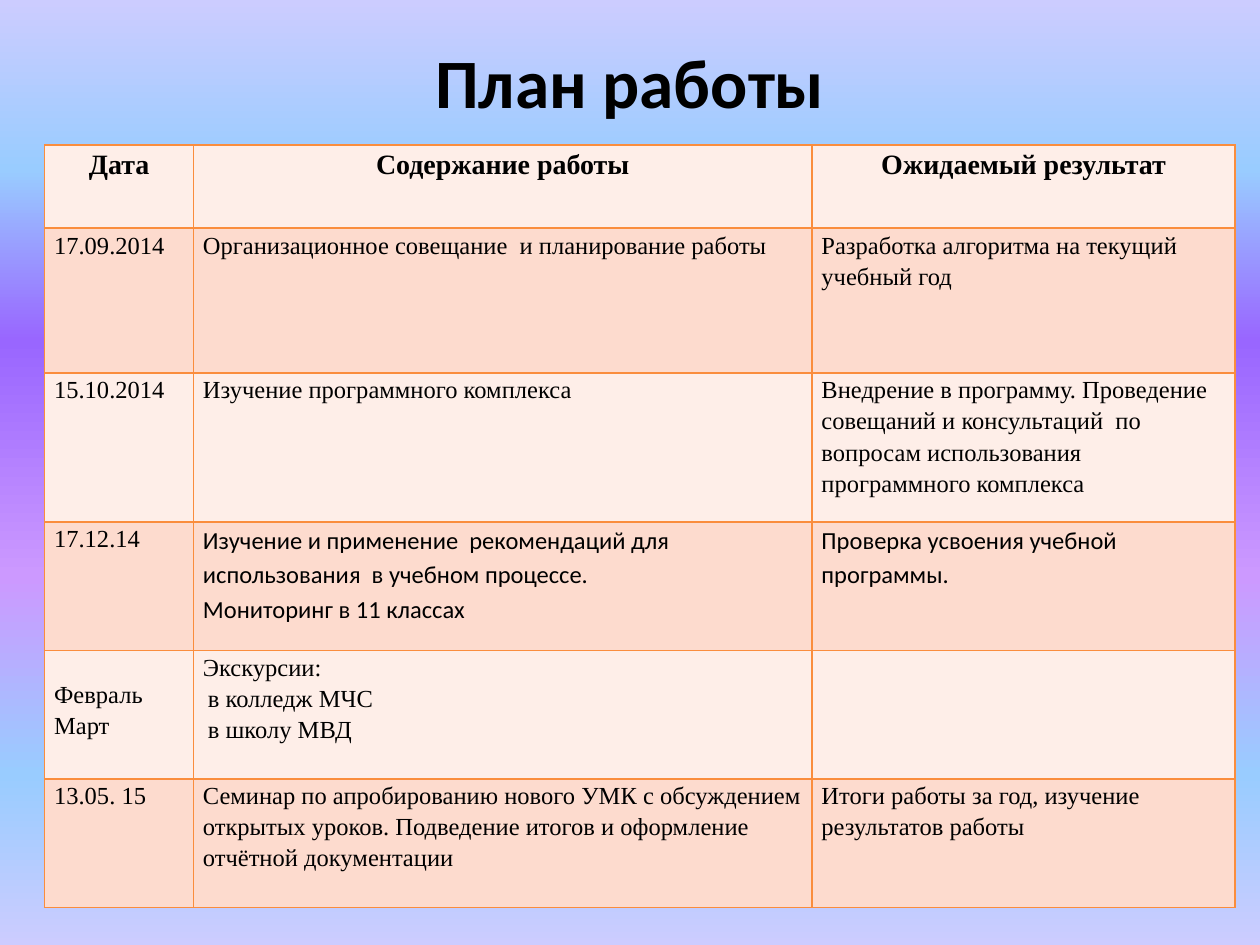
from lxml.etree import SubElement, fromstring
from pptx import Presentation
from pptx.dml.color import RGBColor
from pptx.enum.text import MSO_ANCHOR, PP_ALIGN
from pptx.oxml.ns import nsdecls, qn
from pptx.util import Cm, Pt


def color(code):
    return RGBColor.from_string(code)


def write(para, text, size, font, bold=False):
    run = para.add_run()
    run.text = text
    run.font.size = Pt(size)
    run.font.name = font
    run.font.bold = bold
    run.font.color.rgb = color("000000")


SERIF, SANS = "Times New Roman", "Calibri"
STOPS = [(0, "CCCCFF"), (18, "99CCFF"), (36, "9966FF"),
         (61, "CC99FF"), (82, "99CCFF"), (100, "CCCCFF")]
COLS = [3, 12.47, 8.53]
ROWS = [1.68, 2.92, 3, 2.59, 2.59, 2.59]
PLAN = [
    [["Дата"], ["Содержание работы"], ["Ожидаемый результат"]],
    [["17.09.2014"], ["Организационное совещание  и планирование работы"],
     ["Разработка алгоритма на текущий учебный год"]],
    [["15.10.2014"], ["Изучение программного комплекса"],
     ["Внедрение в программу. Проведение совещаний и консультаций  по "
      "вопросам использования программного комплекса"]],
    [["17.12.14"],
     ["Изучение и применение  рекомендаций для использования  в учебном процессе.",
      "Мониторинг в 11 классах"],
     ["Проверка усвоения учебной программы."]],
    [["Февраль", "Март"], ["Экскурсии:", "в колледж МЧС", "в школу МВД"], []],
    [["13.05. 15"],
     ["Семинар по апробированию нового УМК с обсуждением открытых уроков. "
      "Подведение итогов и оформление отчётной документации"],
     ["Итоги работы за год, изучение результатов работы"]],
]

deck = Presentation()
deck.slide_width, deck.slide_height = Cm(25.4), Cm(19.05)
slide = deck.slides.add_slide(deck.slide_layouts[6])

back = slide.background.fill
back.gradient()
back.gradient_angle = 270
stops = slide.element.find(".//" + qn("a:gsLst"))
for stop in list(stops):
    stops.remove(stop)
for pos, code in STOPS:
    stop = SubElement(stops, qn("a:gs"), pos=str(pos * 1000))
    SubElement(stop, qn("a:srgbClr"), val=code)

title = slide.shapes.add_textbox(Cm(1.27), Cm(0.76), Cm(22.86), Cm(1.75)).text_frame
title.word_wrap = True
title.vertical_anchor = MSO_ANCHOR.MIDDLE
title.paragraphs[0].alignment = PP_ALIGN.CENTER
write(title.paragraphs[0], "План работы", 39.6, SANS, True)

table = slide.shapes.add_table(len(ROWS), len(COLS), Cm(0.9), Cm(2.92),
                               Cm(sum(COLS)), Cm(sum(ROWS))).table
for col, width in zip(table.columns, COLS):
    col.width = Cm(width)
for row, height in zip(table.rows, ROWS):
    row.height = Cm(height)

for r, row in enumerate(PLAN):
    for c, lines in enumerate(row):
        cell = table.cell(r, c)
        cell.margin_left = cell.margin_right = Cm(0.19)
        cell.margin_top = Cm(0.55 if lines[:1] == ["Февраль"] else 0)
        cell.margin_bottom = Cm(0)
        cell.fill.solid()
        cell.fill.fore_color.rgb = color("FDDBCE" if r % 2 else "FEEEE8")
        props = cell._tc.get_or_add_tcPr()
        for i, side in enumerate("LRTB"):
            props.insert(i, fromstring(
                f'<a:ln{side} {nsdecls("a")} w="12700"><a:solidFill>'
                f'<a:srgbClr val="FA8D3D"/></a:solidFill></a:ln{side}>'))
        for i, line in enumerate(lines):
            frame = cell.text_frame
            para = frame.add_paragraph() if i else frame.paragraphs[0]
            para.line_spacing = 1.15
            para.alignment = PP_ALIGN.LEFT if r else PP_ALIGN.CENTER
            if r == 4 and c == 1 and i:
                para._p.get_or_add_pPr().set("marL", str(Cm(0.1)))
            font = SANS if r == 3 and c else SERIF
            write(para, line, 14 if r else 16, font, r == 0)

deck.save("out.pptx")
